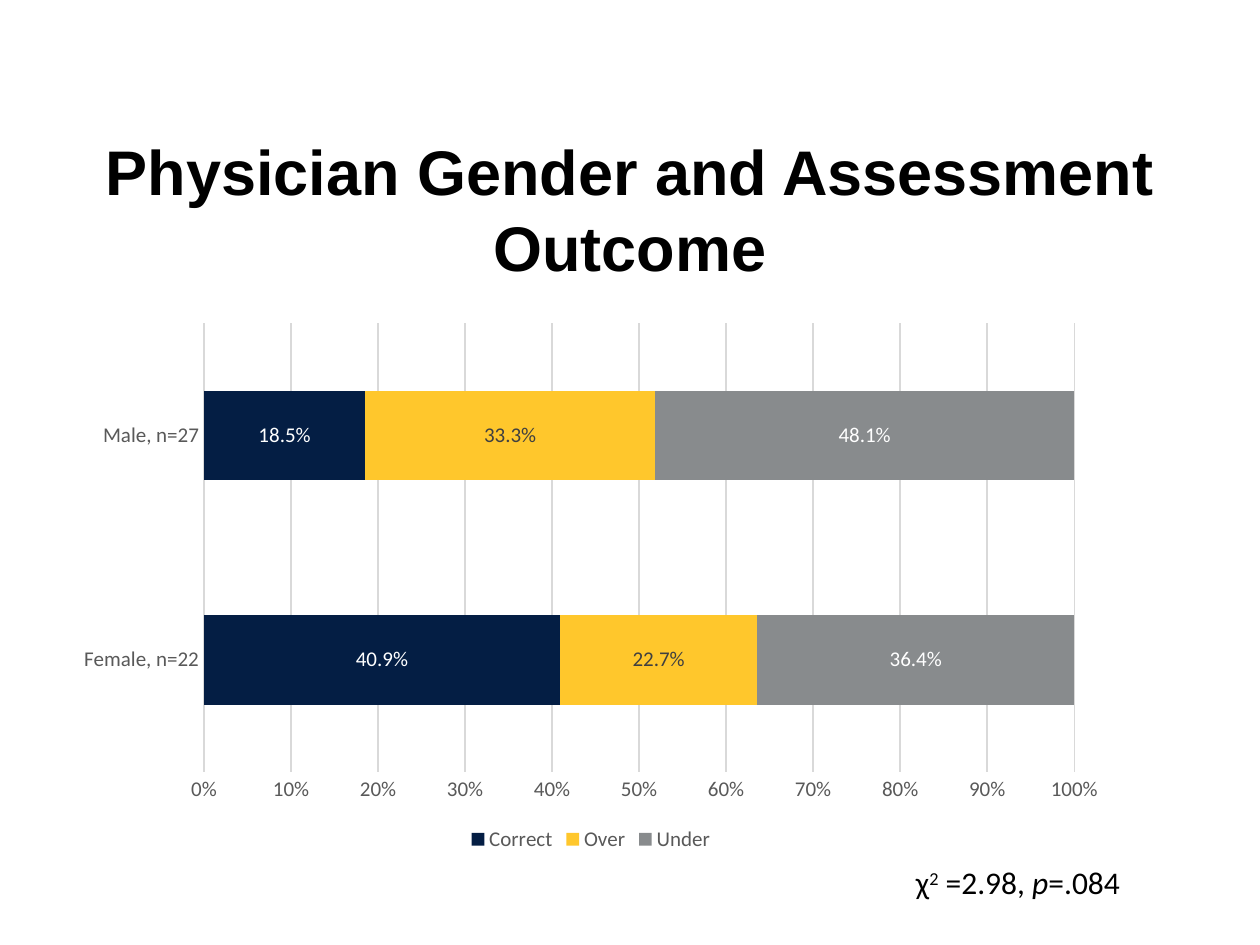
"""Build a slide comparing assessment outcomes by physician gender."""
from pptx import Presentation, util as u
from pptx.chart.data import CategoryChartData
from pptx.dml.color import RGBColor
from pptx.enum import chart as c, text as t


def color(value):
    return RGBColor.from_string(value)


def set_font(font, hex_color, **values):
    font.color.rgb = color(hex_color)
    for name, value in values.items():
        setattr(font, name, value)


chart_font = {"name": "Calibri", "size": u.Pt(12)}
presentation = Presentation()
presentation.slide_width, presentation.slide_height = u.Inches(10), u.Inches(7.5)
slide = presentation.slides.add_slide(presentation.slide_layouts[5])

title = slide.shapes.title
title.left, title.top = u.Inches(0.5), u.Inches(1.03)
title.width, title.height = u.Inches(9), u.Inches(1.25)
title.text_frame.text = "Physician Gender and Assessment Outcome"
title.text_frame.vertical_anchor = t.MSO_ANCHOR.MIDDLE
paragraph = title.text_frame.paragraphs[0]
paragraph.alignment = t.PP_ALIGN.CENTER
set_font(paragraph.runs[0].font, "000000", name="Arial", size=u.Pt(36), bold=True)

outcomes = [
    ("Correct", (0.409, 0.185), "041E44", "FFFFFF"),
    ("Over", (0.227, 0.333), "FFC72C", "404040"),
    ("Under", (0.364, 0.481), "888B8D", "FFFFFF"),
]
chart_data = CategoryChartData(number_format="0.0%")
chart_data.categories = ["Female, n=22", "Male, n=27"]
for name, values, _, _ in outcomes:
    chart_data.add_series(name, values)
chart = slide.shapes.add_chart(
    c.XL_CHART_TYPE.BAR_STACKED_100, u.Inches(0.5), u.Inches(2.48),
    u.Inches(8.38), u.Inches(4.32), chart_data).chart
set_font(chart.font, "000000", name="Calibri", size=u.Pt(10))
chart.has_title = False
chart.has_legend = True
chart.legend.position = c.XL_LEGEND_POSITION.BOTTOM
chart.legend.include_in_layout = False
set_font(chart.legend.font, "595959", **chart_font)

for axis in (chart.category_axis, chart.value_axis):
    axis.major_tick_mark = axis.minor_tick_mark = c.XL_TICK_MARK.NONE
    set_font(axis.tick_labels.font, "595959", **chart_font)
chart.value_axis.has_major_gridlines = True
chart.value_axis.tick_labels.number_format = "0%"
chart.value_axis.tick_labels.number_format_is_linked = False
for line in (chart.category_axis.format.line, chart.value_axis.major_gridlines.format.line):
    line.color.rgb = color("D9D9D9")
    line.width = u.Pt(0.75)
chart.value_axis.format.line.fill.background()

plot = chart.plots[0]
plot.gap_width, plot.overlap = 150, 100
plot.vary_by_categories = False
for series, (_, _, fill, label_color) in zip(plot.series, outcomes):
    series.format.fill.solid()
    series.format.fill.fore_color.rgb = color(fill)
    labels = series.data_labels
    labels.show_value = True
    labels.position = c.XL_LABEL_POSITION.CENTER
    labels.number_format = "0.0%"
    labels.number_format_is_linked = False
    set_font(labels.font, label_color, **chart_font)

statistic = slide.shapes.add_textbox(
    u.Inches(7.17), u.Inches(6.8), u.Inches(1.91), u.Inches(0.4))
statistic.text_frame.word_wrap = False
statistic.text_frame.auto_size = t.MSO_AUTO_SIZE.SHAPE_TO_FIT_TEXT
paragraph = statistic.text_frame.paragraphs[0]
for content in ("χ", "2", " =2.98, ", "p", "=.084"):
    run = paragraph.add_run()
    run.text = content
    set_font(run.font, "000000", name="Calibri", size=u.Pt(18), italic=content == "p")
    if content == "2":
        run._r.get_or_add_rPr().set("baseline", "30000")

presentation.save("out.pptx")
